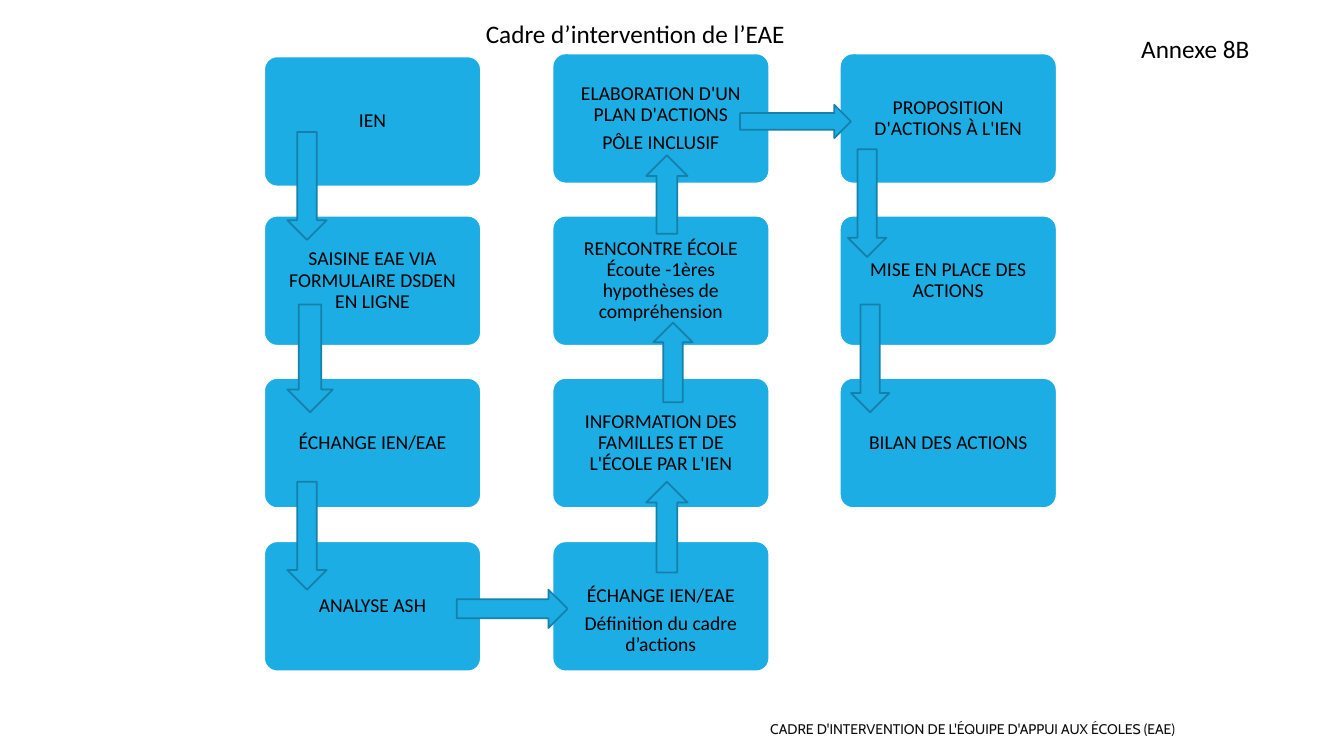
from pptx import Presentation
from pptx.dml.color import RGBColor
from pptx.enum.shapes import MSO_SHAPE
from pptx.enum.text import MSO_ANCHOR, PP_ALIGN
from pptx.util import Pt

PX = 9144  # 100 px to the inch
COLORS = {"box": "1CADE4", "edge": "1580A9", "rim": "FFFFFF",
          "text": "000000", "foot": "0D0D0D"}


def paint(kind, area, line):
    """Add a blue preset shape with the given line colour."""
    shape = slide.shapes.add_shape(kind, *[n * PX for n in area])
    shape.shadow.inherit = False
    shape.fill.solid()
    shape.fill.fore_color.rgb = RGBColor.from_string(COLORS["box"])
    shape.line.color.rgb = RGBColor.from_string(COLORS[line])
    shape.line.width = Pt(1.25)
    return shape


def write(frame, text, size, align, font="Calibri", color="text"):
    """Fill a text frame and format each of its paragraphs."""
    frame.word_wrap = True
    frame.text = text
    for para in frame.paragraphs:
        para.alignment = align
        for run in para.runs:
            run.font.size = Pt(size)
            run.font.name = font
            run.font.color.rgb = RGBColor.from_string(COLORS[color])


deck = Presentation()
deck.slide_width, deck.slide_height = 1333 * PX, 750 * PX
slide = deck.slides.add_slide(deck.slide_layouts[6])

# Steps, column by column from the top
lefts = (262, 548, 833)
tops = (53, 214, 375, 537)
steps = (
    ("IEN",
     "SAISINE EAE VIA FORMULAIRE DSDEN EN LIGNE",
     "ÉCHANGE IEN/EAE",
     "ANALYSE ASH"),
    ("ELABORATION D'UN PLAN D'ACTIONS\nPÔLE INCLUSIF",
     "RENCONTRE ÉCOLE Écoute -1ères hypothèses de compréhension",
     "INFORMATION DES FAMILLES ET DE L'ÉCOLE PAR L'IEN",
     "ÉCHANGE IEN/EAE\nDéfinition du cadre d’actions"),
    ("PROPOSITION D'ACTIONS À L'IEN",
     "MISE EN PLACE DES ACTIONS",
     "BILAN DES ACTIONS"),
)
for left, column in zip(lefts, steps):
    for top, text in zip(tops, column):
        if text == "IEN":
            top += 3
        box = paint(MSO_SHAPE.ROUNDED_RECTANGLE, (left, top, 215, 129), "rim")
        box.adjustments[0] = 0.1
        frame = box.text_frame
        frame.vertical_anchor = MSO_ANCHOR.MIDDLE
        frame.margin_left = frame.margin_right = 10 * PX
        frame.margin_top = frame.margin_bottom = 10 * PX
        if "Définition" in text:
            frame.margin_top = 38 * PX
        write(frame, text, 14, PP_ALIGN.CENTER)
        for para in frame.paragraphs:
            para.line_spacing = 0.9
            para.space_after = Pt(5)

# Arrows between the steps
down, up, right = MSO_SHAPE.DOWN_ARROW, MSO_SHAPE.UP_ARROW, MSO_SHAPE.RIGHT_ARROW
arrows = (
    (down, (285, 131, 39, 107)),
    (down, (285, 478, 39, 107)),
    (down, (285, 302, 45, 107)),
    (right, (453, 585, 110, 38)),
    (up, (641, 478, 41, 90)),
    (up, (648, 320, 39, 79)),
    (up, (641, 154, 41, 78)),
    (right, (734, 104, 110, 33)),
    (down, (841, 148, 38, 107)),
    (down, (844, 302, 38, 107)),
)
for kind, area in arrows:
    paint(kind, area, "edge")

# Footer, annex mark and title
foot = slide.shapes.add_textbox(530 * PX, 708 * PX, 645 * PX, 30 * PX)
foot.text_frame.vertical_anchor = MSO_ANCHOR.MIDDLE
write(foot.text_frame, "CADRE D'INTERVENTION DE L'ÉQUIPE D'APPUI AUX ÉCOLES (EAE)",
      10, PP_ALIGN.RIGHT, "Cabin", "foot")
labels = (
    ("Annexe 8B", (1122, 28, 178, 40)),
    ("Cadre d’intervention de l’EAE", (472, 13, 337, 40)),
)
for text, area in labels:
    label = slide.shapes.add_textbox(*[n * PX for n in area])
    write(label.text_frame, text, 18, PP_ALIGN.LEFT)

deck.save("out.pptx")
